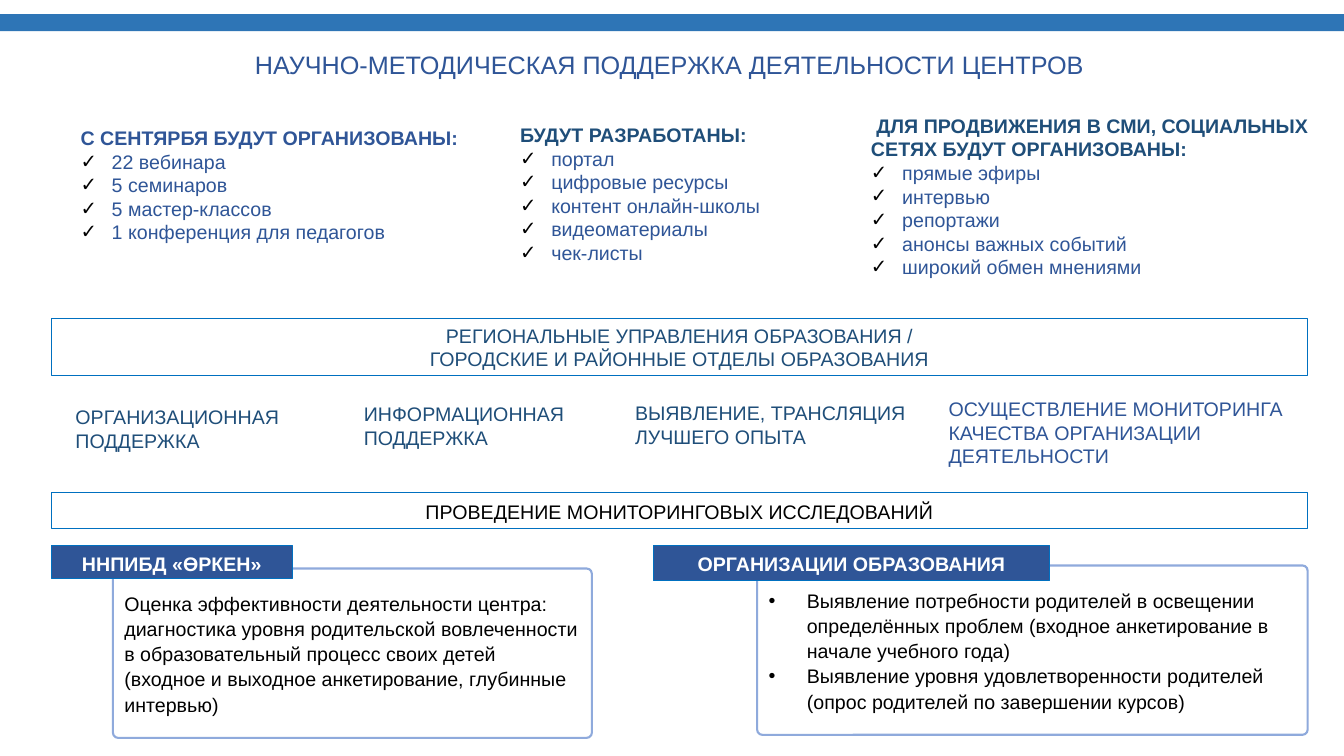
from lxml import etree
from pptx import Presentation
from pptx.dml.color import RGBColor
from pptx.enum.shapes import MSO_SHAPE
from pptx.enum.text import MSO_ANCHOR, PP_ALIGN
from pptx.oxml.ns import qn
from pptx.util import Inches, Pt

RECT, ROUNDED = MSO_SHAPE.RECTANGLE, MSO_SHAPE.ROUNDED_RECTANGLE
TOP, MIDDLE = MSO_ANCHOR.TOP, MSO_ANCHOR.MIDDLE
LEFT, CENTER = PP_ALIGN.LEFT, PP_ALIGN.CENTER

COLORS = {
    "band": "2E75B6",
    "blue": "2F5597",
    "navy": "1F4E79",
    "border": "0070C0",
    "frame": "8FAADC",
    "black": "000000",
    "white": "FFFFFF",
}


def add_box(at, shape=None, fill=None, line=None, weight=0.75, anchor=TOP):
    """Add a preset shape, or a text box when no shape is given."""
    at = [Inches(v) for v in at]
    if shape is None:
        sp = s.shapes.add_textbox(*at)
    else:
        sp = s.shapes.add_shape(shape, *at)
        sp.shadow.inherit = False
        if fill:
            sp.fill.solid()
            sp.fill.fore_color.rgb = RGBColor.from_string(COLORS[fill])
        else:
            sp.fill.background()
        if line:
            sp.line.color.rgb = RGBColor.from_string(COLORS[line])
            sp.line.width = Pt(weight)
        else:
            sp.line.fill.background()
    sp.text_frame.word_wrap = True
    sp.text_frame.vertical_anchor = anchor
    return sp


def add_lines(sp, lines, color, size=14, bold=False, align=LEFT,
              bullet=None, indent=0.31, **spacing):
    """Append paragraphs, filling the empty first one if there is one."""
    tf = sp.text_frame
    for text in lines:
        p = tf.add_paragraph() if tf.text else tf.paragraphs[0]
        p.text = text
        p.alignment = align
        for name, value in spacing.items():
            setattr(p, name, value)
        if bullet:
            pPr = p._p.get_or_add_pPr()
            pPr.set("marL", str(Inches(indent)))
            pPr.set("indent", str(-Inches(indent)))
            bullet_color = etree.SubElement(pPr, qn("a:buClr"))
            etree.SubElement(bullet_color, qn("a:srgbClr"), val=COLORS["black"])
            etree.SubElement(pPr, qn("a:buFont"), typeface="Arial")
            etree.SubElement(pPr, qn("a:buChar"), char=bullet)
        font = p.runs[0].font
        for name, value in {"name": "Arial", "size": Pt(size), "bold": bold}.items():
            setattr(font, name, value)
        font.color.rgb = RGBColor.from_string(COLORS[color])


prs = Presentation()
prs.slide_width, prs.slide_height = Inches(13.33), Inches(7.5)
s = prs.slides.add_slide(prs.slide_layouts[6])

# Header
add_box((0, 0.14, 13.33, 0.17), RECT, fill="band")
title = add_box((0.87, 0.42, 11.54, 0.4))
add_lines(title, ["НАУЧНО-МЕТОДИЧЕСКАЯ ПОДДЕРЖКА ДЕЯТЕЛЬНОСТИ ЦЕНТРОВ"],
          "blue", size=18, align=CENTER, line_spacing=1.07)

# Planned activities
activities = [
    ((0.7, 1.2, 4.02, 1.28), "blue", "С СЕНТЯРБЯ БУДУТ ОРГАНИЗОВАНЫ:",
     ["22 вебинара", "5 семинаров", "5 мастер-классов",
      "1 конференция для педагогов"]),
    ((5.06, 1.17, 3.86, 1.51), "navy", "БУДУТ РАЗРАБОТАНЫ:",
     ["портал", "цифровые ресурсы", "контент онлайн-школы",
      "видеоматериалы", "чек-листы"]),
    ((8.54, 1.08, 4.59, 1.75), "navy",
     " ДЛЯ ПРОДВИЖЕНИЯ В СМИ, СОЦИАЛЬНЫХ СЕТЯХ БУДУТ ОРГАНИЗОВАНЫ:",
     ["прямые эфиры", "интервью", "репортажи",
      "анонсы важных событий", "широкий обмен мнениями"]),
]
for at, color, heading, items in activities:
    sp = add_box(at)
    add_lines(sp, [heading], color, bold=True)
    add_lines(sp, items, "blue", bullet="✓")

# Full-width bars
bars = [
    (3.16, 0.57, "navy", 1.0, ["РЕГИОНАЛЬНЫЕ УПРАВЛЕНИЯ ОБРАЗОВАНИЯ /",
                               "ГОРОДСКИЕ И РАЙОННЫЕ ОТДЕЛЫ ОБРАЗОВАНИЯ"]),
    (4.89, 0.35, "black", 1.07, ["ПРОВЕДЕНИЕ МОНИТОРИНГОВЫХ ИССЛЕДОВАНИЙ"]),
]
for top, height, color, spacing, lines in bars:
    sp = add_box((0.51, top, 12.46, height), RECT, line="border")
    add_lines(sp, lines, color, align=CENTER, line_spacing=spacing)

# Kinds of support
supports = [
    ((0.65, 3.97, 2.81, 0.57), "navy", "ОРГАНИЗАЦИОННАЯ ПОДДЕРЖКА"),
    ((3.51, 3.94, 2.24, 0.57), "navy", "ИНФОРМАЦИОННАЯ ПОДДЕРЖКА"),
    ((6.2, 3.93, 3.06, 0.57), "navy", "ВЫЯВЛЕНИЕ, ТРАНСЛЯЦИЯ ЛУЧШЕГО ОПЫТА"),
    ((9.31, 3.89, 3.67, 0.81), "blue",
     "ОСУЩЕСТВЛЕНИЕ МОНИТОРИНГА КАЧЕСТВА ОРГАНИЗАЦИИ ДЕЯТЕЛЬНОСТИ"),
]
for at, color, text in supports:
    add_lines(add_box(at), [text], color)

# Monitoring panels with their labels
panels = [
    ((1.12, 5.64, 4.75, 1.68), None,
     ["Оценка эффективности деятельности центра: диагностика уровня "
      "родительской вовлеченности в образовательный процесс своих детей "
      "(входное и выходное анкетирование, глубинные интервью)"],
     (0.51, 5.41, 2.39, 0.33), "ННПИБД «ӨРКЕН»"),
    ((7.51, 5.61, 5.46, 1.68), "•",
     ["Выявление потребности родителей в освещении определённых проблем "
      "(входное анкетирование в начале учебного года)",
      "Выявление уровня удовлетворенности родителей "
      "(опрос родителей по завершении курсов)"],
     (6.48, 5.41, 3.93, 0.35), "ОРГАНИЗАЦИИ ОБРАЗОВАНИЯ"),
]
for at, bullet, lines, label_at, label_text in panels:
    panel = add_box(at, ROUNDED, line="frame", weight=1.5, anchor=MIDDLE)
    panel.adjustments[0] = 0.03
    add_lines(panel, lines, "black", bullet=bullet, indent=0.38, line_spacing=1.07)
    label = add_box(label_at, RECT, fill="blue", line="border")
    add_lines(label, [label_text], "white", bold=True, align=CENTER,
              line_spacing=1.07)

prs.save("out.pptx")
